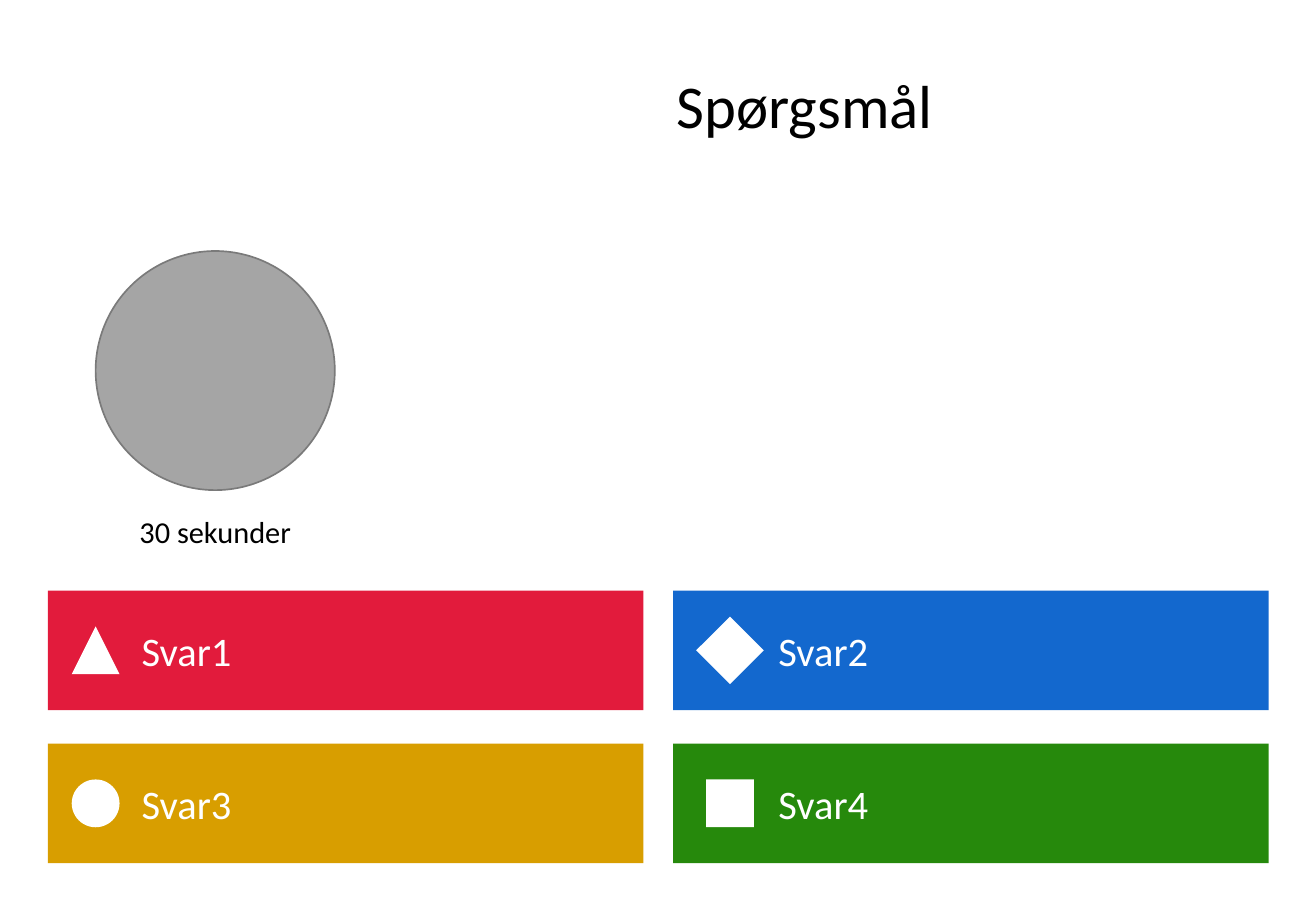
from pptx import Presentation
from pptx import util as u
from pptx.dml.color import RGBColor
from pptx.enum import shapes, text

Cm, Pt = u.Cm, u.Pt
Kind = shapes.MSO_SHAPE
WHITE = RGBColor(0xFF, 0xFF, 0xFF)
BLACK = RGBColor(0, 0, 0)
RED = RGBColor(0xE2, 0x1B, 0x3C)
BLUE = RGBColor(0x13, 0x68, 0xCE)
GOLD = RGBColor(0xD8, 0x9E, 0x00)
GREEN = RGBColor(0x26, 0x89, 0x0C)
GREY = RGBColor(0xA5, 0xA5, 0xA5)
DARK = RGBColor(0x7A, 0x7A, 0x7A)

WIDE, HIGH, ICON = 12.45, 2.5, 1
COLS = [(1, 0.5, 1.96), (14.07, 0.69, 2.2)]
ROWS = [12.35, 15.55]
ANSWERS = [
    ("Svar1", RED, Kind.ISOSCELES_TRIANGLE, 0),
    ("Svar2", BLUE, Kind.RECTANGLE, 45),
    ("Svar3", GOLD, Kind.OVAL, 0),
    ("Svar4", GREEN, Kind.RECTANGLE, 0),
]


def add_form(slide, kind, x, y, w, h, fill, line=None):
    form = slide.shapes.add_shape(kind, Cm(x), Cm(y), Cm(w), Cm(h))
    form.shadow.inherit = False
    form.fill.solid()
    form.fill.fore_color.rgb = fill
    if line is None:
        form.line.fill.background()
    else:
        form.line.color.rgb = line
        form.line.width = Pt(1)
    return form


def write(frame, words, size, color, align):
    frame.word_wrap = True
    para = frame.paragraphs[0]
    para.text = words
    para.alignment = align
    para.font.name = "Calibri"
    para.font.size = Pt(size)
    para.font.color.rgb = color


def add_label(slide, words, x, y, w, h, size):
    box = slide.shapes.add_textbox(Cm(x), Cm(y), Cm(w), Cm(h))
    write(box.text_frame, words, size, BLACK, text.PP_ALIGN.CENTER)
    box.text_frame.auto_size = text.MSO_AUTO_SIZE.SHAPE_TO_FIT_TEXT


def add_answer(slide, index, words, color, kind, turn):
    row, col = divmod(index, 2)
    x, shift, inset = COLS[col]
    y = ROWS[row]
    bar = add_form(slide, Kind.RECTANGLE, x, y, WIDE, HIGH, color)
    frame = bar.text_frame
    write(frame, words, 24, WHITE, text.PP_ALIGN.JUSTIFY)
    frame.margin_left = Cm(inset)
    frame.vertical_anchor = text.MSO_ANCHOR.MIDDLE
    top = y + (HIGH - ICON) / 2
    icon = add_form(slide, kind, x + shift, top, ICON, ICON, WHITE)
    icon.rotation = turn


def main():
    deck = Presentation()
    deck.slide_width, deck.slide_height = Cm(27.51), Cm(19.05)
    slide = deck.slides.add_slide(deck.slide_layouts[6])
    for index, answer in enumerate(ANSWERS):
        add_answer(slide, index, *answer)
    add_form(slide, Kind.OVAL, 2, 5.25, 5, 5, GREY, DARK)
    add_label(slide, "Spørgsmål", 7.75, 1.3, 18.14, 1.8, 36)
    add_label(slide, "30 sekunder", 2, 10.6, 5, 1.02, 18)
    deck.save("out.pptx")


if __name__ == "__main__":
    main()
